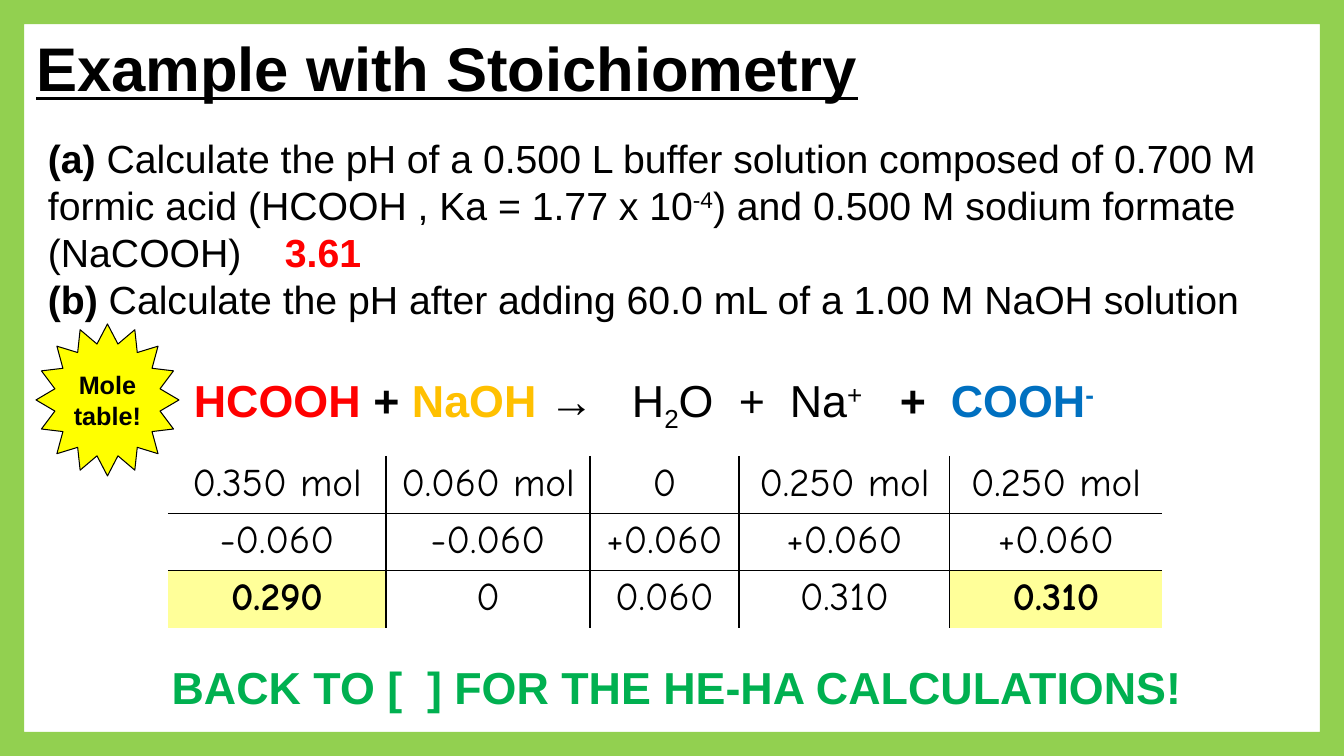
from lxml import etree
from pptx import Presentation
from pptx import util as u
from pptx.dml.color import RGBColor
from pptx.enum import shapes, text
from pptx.oxml import ns

PX = 914400 / 100.8
BLACK = RGBColor(0, 0, 0)
RED = RGBColor(0xFF, 0, 0)
AMBER = RGBColor(0xFF, 0xC0, 0)
BLUE = RGBColor(0, 0x70, 0xC0)
GREEN = RGBColor(0, 0xB0, 0x50)
LIME = RGBColor(0x92, 0xD0, 0x50)
YELLOW = RGBColor(0xFF, 0xFF, 0)
PALE = RGBColor(0xFF, 0xFF, 0x99)
LEFT, MID = text.PP_ALIGN.LEFT, text.PP_ALIGN.CENTER

TASK = [
    [("(a) ", {"bold": True}),
     ("Calculate the pH of a 0.500 L buffer solution composed of 0.700 M "
      "formic acid (HCOOH , Ka = 1.77 x 10", {}),
     ("-4", {"base": 30}),
     (") and 0.500 M sodium formate (NaCOOH)\t", {}),
     ("3.61", {"bold": True, "color": RED})],
    [("(b) ", {"bold": True}),
     ("Calculate the pH after adding 60.0 mL of a 1.00 M NaOH solution", {})],
]
REACTION = [[
    ("HCOOH", {"bold": True, "color": RED}),
    (" + ", {"bold": True}),
    ("NaOH ", {"bold": True, "color": AMBER}),
    ("→\t", {"bold": True}),
    ("H", {}),
    ("2", {"base": -25}),
    ("O\t+\tNa", {}),
    ("+", {"base": 30}),
    ("\t+\t", {"bold": True}),
    ("COOH", {"bold": True, "color": BLUE}),
    ("-", {"bold": True, "color": BLUE, "base": 30}),
]]
MOLES = [
    ["0.350 mol", "0.060 mol", "0", "0.250 mol", "0.250 mol"],
    ["-0.060", "-0.060", "+0.060", "+0.060", "+0.060"],
    ["0.290", "0", "0.060", "0.310", "0.310"],
]
WIDTHS = [218, 204, 149, 211, 212]
KEY = {(2, 0), (2, 4)}


def px(*sizes):
    return [u.Emu(round(size * PX)) for size in sizes]


def style(run, size, name="Arial", color=BLACK, base=0, **marks):
    font = run.font
    form = {"size": u.Pt(size), "name": name, "bold": False, **marks}
    for key, value in form.items():
        setattr(font, key, value)
    font.color.rgb = color
    if base:
        run._r.get_or_add_rPr().set("baseline", str(base * 1000))


def write(frame, paras, size, align=LEFT, tabs=()):
    for i, runs in enumerate(paras):
        para = frame.add_paragraph() if i else frame.paragraphs[0]
        para.alignment = align
        if tabs:
            stops = etree.SubElement(para._p.get_or_add_pPr(), ns.qn("a:tabLst"))
            for stop in px(*tabs):
                etree.SubElement(stops, ns.qn("a:tab"), pos=str(stop), algn="l")
        for words, form in runs:
            run = para.add_run()
            run.text = words
            style(run, size, **form)


def add_text(slide, box, paras, size, align=LEFT, tabs=()):
    frame = slide.shapes.add_textbox(*px(*box)).text_frame
    frame.word_wrap = True
    write(frame, paras, size, align, tabs)


def add_form(slide, kind, box, fill):
    shape = slide.shapes.add_shape(kind, *px(*box))
    shape.shadow.inherit = False
    shape.fill.solid()
    shape.fill.fore_color.rgb = fill
    shape.line.fill.background()
    return shape


def add_title(slide, words):
    title = slide.shapes.title
    for key, value in zip(("left", "top", "width", "height"), px(26, 25, 1058, 84)):
        setattr(title, key, value)
    title.text_frame.vertical_anchor = text.MSO_ANCHOR.MIDDLE
    write(title.text_frame, [[(words, {"bold": True, "underline": True})]], 44)


def add_star(slide, words):
    star = add_form(slide, shapes.MSO_SHAPE.STAR_16_POINT, (36, 324, 143, 152), YELLOW)
    star.line.color.rgb = BLACK
    star.line.width = u.Pt(0.75)
    frame = star.text_frame
    form = {"word_wrap": True, "vertical_anchor": text.MSO_ANCHOR.MIDDLE,
            "margin_left": 0, "margin_right": 0, "margin_top": 0, "margin_bottom": 0}
    for key, value in form.items():
        setattr(frame, key, value)
    write(frame, [[(words, {"bold": True})]], 18, MID)


def rule(cell, sides):
    props = cell._tc.get_or_add_tcPr()
    for i, (side, drawn) in enumerate(sides.items()):
        line = etree.Element(ns.qn("a:ln" + side), w=str(u.Pt(1)))
        fill = etree.SubElement(line, ns.qn("a:solidFill" if drawn else "a:noFill"))
        if drawn:
            etree.SubElement(fill, ns.qn("a:srgbClr"), val=str(BLACK))
        props.insert(i, line)


def add_moles(slide):
    rows, cols = len(MOLES), len(WIDTHS)
    box = px(168, 456, sum(WIDTHS), 57 * rows)
    table = slide.shapes.add_table(rows, cols, *box).table
    table.first_row = table.horz_banding = False
    for col, width in zip(table.columns, px(*WIDTHS)):
        col.width = width
    for r, row in enumerate(MOLES):
        for c, words in enumerate(row):
            cell = table.cell(r, c)
            key = (r, c) in KEY
            if key:
                cell.fill.solid()
                cell.fill.fore_color.rgb = PALE
            else:
                cell.fill.background()
            rule(cell, {"L": c > 0, "R": c < cols - 1, "T": r > 0, "B": r < rows - 1})
            form = {"name": "Comic Neue", "bold": key}
            write(cell.text_frame, [[(words, form)]], 28, MID)


def main():
    deck = Presentation()
    deck.slide_width, deck.slide_height = px(1344, 756)
    slide = deck.slides.add_slide(deck.slide_layouts[5])
    add_title(slide, "Example with Stoichiometry")
    edge = add_form(slide, shapes.MSO_SHAPE.FRAME, (0, 0, 1344, 756), LIME)
    edge.adjustments[0] = 0.032
    add_text(slide, (38, 129, 1272, 201), TASK, 28, tabs=[237])
    add_text(slide, (184, 368, 975, 65), REACTION, 32, tabs=[438, 545, 596, 706, 757])
    add_moles(slide)
    add_star(slide, "Mole table!")
    close = "BACK TO [  ] FOR THE HE-HA CALCULATIONS!"
    add_text(slide, (76, 655, 1202, 65),
             [[(close, {"bold": True, "color": GREEN})]], 32, MID)
    deck.save("out.pptx")


if __name__ == "__main__":
    main()
